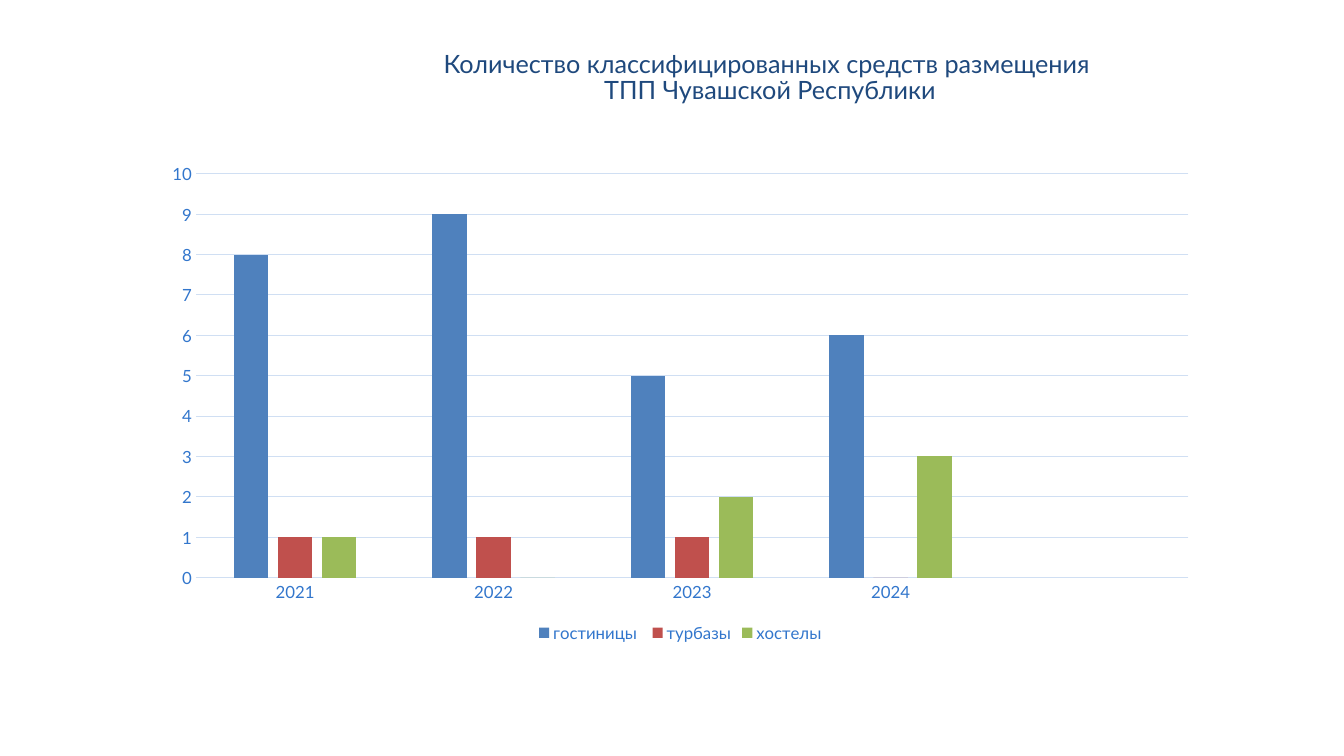
from dataclasses import dataclass

from pptx import Presentation
from pptx.chart.data import CategoryChartData
from pptx.dml.color import RGBColor
from pptx.enum.chart import XL_CHART_TYPE, XL_LEGEND_POSITION, XL_TICK_MARK
from pptx.enum.text import MSO_ANCHOR, PP_ALIGN
from pptx.util import Pt


@dataclass(frozen=True)
class Theme:
    font: str = "Lato"
    heading: str = "1F497D"
    chart_text: str = "17365D"
    label: str = "3276CC"
    grid: str = "D0DFF3"
    heading_size: int = 18
    chart_size: int = 10
    label_size: int = 12


THEME = Theme()
HEADING = ("Количество классифицированных средств размещения ", "ТПП Чувашской Республики")
YEARS = ("2021", "2022", "2023", "2024", "")
LODGINGS = (
    ("гостиницы ", (8, 9, 5, 6, None), "4F81BD"),
    ("турбазы", (1, 1, 1, 0, None), "C0504D"),
    ("хостелы", (1, 0, 2, 3, None), "9BBB59"),
)


def style_font(font, size, color):
    font.name = THEME.font
    font.size = Pt(size)
    font.bold = False
    font.color.rgb = RGBColor.from_string(color)


def style_line(line):
    line.color.rgb = RGBColor.from_string(THEME.grid)
    line.width = Pt(0.75)


def place_heading(slide, left, top, width, height):
    heading = slide.shapes.title
    heading.left, heading.top = Pt(left), Pt(top)
    heading.width, heading.height = Pt(width), Pt(height)
    frame = heading.text_frame
    frame.word_wrap = True
    frame.vertical_anchor = MSO_ANCHOR.MIDDLE
    paragraph = frame.paragraphs[0]
    paragraph.alignment = PP_ALIGN.CENTER
    paragraph.line_spacing = 0.89
    for index, words in enumerate(HEADING):
        if index:
            paragraph.add_line_break()
        run = paragraph.add_run()
        run.text = words
        style_font(run.font, THEME.heading_size, THEME.heading)


def place_lodging_chart(slide, left, top, width, height):
    lodging_data = CategoryChartData()
    lodging_data.categories = YEARS
    for name, counts, _ in LODGINGS:
        lodging_data.add_series(name, counts)
    chart = slide.shapes.add_chart(
        XL_CHART_TYPE.COLUMN_CLUSTERED,
        Pt(left), Pt(top), Pt(width), Pt(height), lodging_data,
    ).chart
    chart.has_title = False
    style_font(chart.font, THEME.chart_size, THEME.chart_text)

    plot = chart.plots[0]
    plot.vary_by_categories = False
    plot.gap_width = 219
    plot.overlap = -27
    for series, (_, _, color) in zip(plot.series, LODGINGS):
        series.format.fill.solid()
        series.format.fill.fore_color.rgb = RGBColor.from_string(color)
        series.invert_if_negative = False

    years, counts = chart.category_axis, chart.value_axis
    for axis in (years, counts):
        axis.major_tick_mark = XL_TICK_MARK.NONE
        axis.minor_tick_mark = XL_TICK_MARK.NONE
        style_font(axis.tick_labels.font, THEME.label_size, THEME.label)
    style_line(years.format.line)
    counts.format.line.fill.background()
    counts.minimum_scale, counts.maximum_scale, counts.major_unit = 0, 10, 1
    counts.has_major_gridlines = True
    style_line(counts.major_gridlines.format.line)

    chart.has_legend = True
    chart.legend.position = XL_LEGEND_POSITION.BOTTOM
    chart.legend.include_in_layout = False
    style_font(chart.legend.font, THEME.label_size, THEME.label)


def main():
    deck = Presentation()
    deck.slide_width, deck.slide_height = Pt(960), Pt(540)
    slide = deck.slides.add_slide(deck.slide_layouts[5])
    place_heading(slide, 172, 31.5, 756, 49)
    place_lodging_chart(slide, 108, 110, 756, 352)
    deck.save("out.pptx")


if __name__ == "__main__":
    main()
